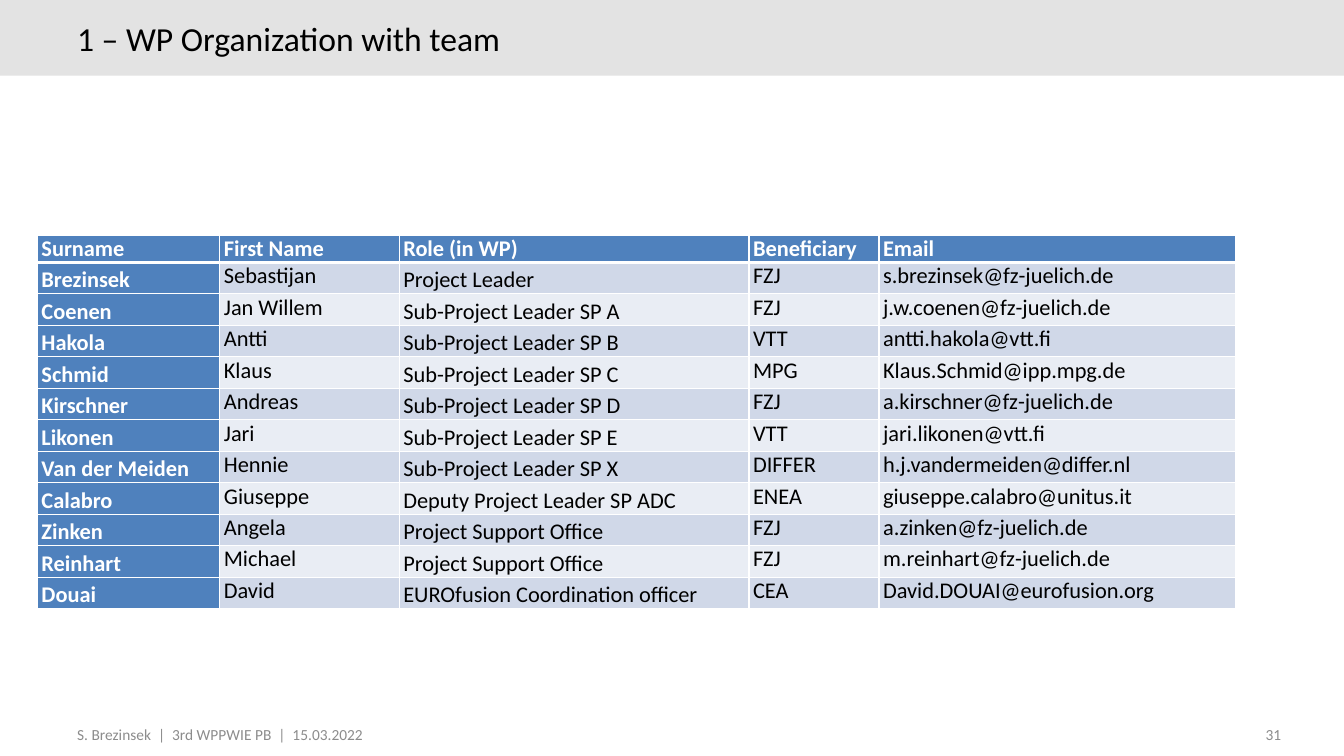
"""Build the team slide on a grid of 160 columns by 90 rows."""
from dataclasses import dataclass

from lxml.etree import SubElement
from pptx import Presentation
from pptx.dml.color import RGBColor
from pptx.enum.shapes import MSO_SHAPE
from pptx.enum.text import MSO_ANCHOR, PP_ALIGN
from pptx.oxml.ns import qn
from pptx.slide import Slide
from pptx.table import _Cell
from pptx.text.text import _Paragraph
from pptx.util import Inches, Length, Pt

COLS, ROWS = 160, 90
WIDE, HIGH = Inches(13.33), Inches(7.5)
FONT = "Calibri"
HUES = {
    "bar": "E3E3E3", "ink": "000000", "grey": "8C8C8C", "white": "FFFFFF",
    "blue": "4F81BD", "odd": "D0D8E8", "even": "E9EDF4",
}
WIDTHS = (21.72, 21.36, 41.64, 15.48, 42.48)
HEAD, BODY = 3.24, 3.75
ROLE = 2
TEAM = (
    ("Surname", "First Name", "Role (in WP)", "Beneficiary", "Email"),
    ("Brezinsek", "Sebastijan", "Project Leader", "FZJ", "s.brezinsek@fz-juelich.de"),
    ("Coenen", "Jan Willem", "Sub-Project Leader SP A", "FZJ", "j.w.coenen@fz-juelich.de"),
    ("Hakola", "Antti", "Sub-Project Leader SP B", "VTT", "antti.hakola@vtt.fi"),
    ("Schmid", "Klaus", "Sub-Project Leader SP C", "MPG", "Klaus.Schmid@ipp.mpg.de"),
    ("Kirschner", "Andreas", "Sub-Project Leader SP D", "FZJ", "a.kirschner@fz-juelich.de"),
    ("Likonen", "Jari", "Sub-Project Leader SP E", "VTT", "jari.likonen@vtt.fi"),
    ("Van der Meiden", "Hennie", "Sub-Project Leader SP X", "DIFFER", "h.j.vandermeiden@differ.nl"),
    ("Calabro", "Giuseppe", "Deputy Project Leader SP ADC", "ENEA", "giuseppe.calabro@unitus.it"),
    ("Zinken", "Angela", "Project Support Office", "FZJ", "a.zinken@fz-juelich.de"),
    ("Reinhart", "Michael", "Project Support Office", "FZJ", "m.reinhart@fz-juelich.de"),
    ("Douai", "David", "EUROfusion Coordination officer", "CEA", "David.DOUAI@eurofusion.org"),
)


@dataclass(frozen=True)
class Label:
    text: str
    left: float
    top: float
    width: float
    height: float
    size: int
    hue: str
    align: PP_ALIGN = PP_ALIGN.LEFT
    anchor: MSO_ANCHOR = MSO_ANCHOR.TOP


LABELS = (
    Label("1 – WP Organization with team", 8, 1.5, 132, 6, 24, "ink", anchor=MSO_ANCHOR.MIDDLE),
    Label("31", 144.24, 85.68, 9.48, 2.64, 11, "grey", PP_ALIGN.RIGHT),
    Label("S. Brezinsek  |  3rd WPPWIE PB  |  15.03.2022", 8, 85.68, 45.6, 4.32, 11, "grey"),
)


def across(cols: float) -> Length:
    return Length(round(WIDE * cols / COLS))


def down(rows: float) -> Length:
    return Length(round(HIGH * rows / ROWS))


def color(hue: str) -> RGBColor:
    return RGBColor.from_string(HUES[hue])


def style(para: _Paragraph, size: int, hue: str, bold: bool = False) -> None:
    for run in para.runs:
        run.font.name = FONT
        run.font.size = Pt(size)
        run.font.bold = bold
        run.font.color.rgb = color(hue)


def add_bar(slide: Slide) -> None:
    bar = slide.shapes.add_shape(MSO_SHAPE.RECTANGLE, 0, 0, WIDE, down(9))
    bar.shadow.inherit = False
    bar.fill.solid()
    bar.fill.fore_color.rgb = color("bar")
    bar.line.fill.background()


def add_label(slide: Slide, label: Label) -> None:
    box = slide.shapes.add_textbox(
        across(label.left), down(label.top), across(label.width), down(label.height))
    frame = box.text_frame
    frame.word_wrap = True
    frame.vertical_anchor = label.anchor
    frame.text = label.text
    para = frame.paragraphs[0]
    para.alignment = label.align
    style(para, label.size, label.hue)


def add_edge(cell: _Cell, side: str, points: int) -> None:
    line = SubElement(cell._tc.get_or_add_tcPr(), qn(f"a:ln{side}"), w=str(Pt(points)))
    fill = SubElement(line, qn("a:solidFill"))
    SubElement(fill, qn("a:srgbClr"), val=HUES["white"])


def fill_cell(cell: _Cell, text: str, row: int, col: int) -> None:
    strong = row == 0 or col == 0
    thick = {(0, "B"), (1, "T")}
    for side in "LRTB":
        add_edge(cell, side, 3 if (row, side) in thick else 1)
    cell.fill.solid()
    cell.fill.fore_color.rgb = color("blue" if strong else "odd" if row % 2 else "even")
    cell.margin_left = cell.margin_right = across(0.5)
    cell.margin_top = cell.margin_bottom = 0
    low = row > 0 and col in (0, ROLE)
    cell.vertical_anchor = MSO_ANCHOR.BOTTOM if low else MSO_ANCHOR.TOP
    cell.text_frame.text = text
    para = cell.text_frame.paragraphs[0]
    para.alignment = PP_ALIGN.JUSTIFY
    para.space_after = Pt(6)
    if row > 0 and col == ROLE:
        para.line_spacing = 1.15
    style(para, 16, "white" if strong else "ink", strong)


def add_team(slide: Slide) -> None:
    high = HEAD + BODY * (len(TEAM) - 1)
    table = slide.shapes.add_table(
        len(TEAM), len(WIDTHS), across(4.44), down(28), across(sum(WIDTHS)), down(high)).table
    for col, width in zip(table.columns, WIDTHS):
        col.width = across(width)
    for row, names in enumerate(TEAM):
        table.rows[row].height = down(BODY if row else HEAD)
        for col, text in enumerate(names):
            fill_cell(table.cell(row, col), text, row, col)


def main() -> None:
    deck = Presentation()
    deck.slide_width, deck.slide_height = WIDE, HIGH
    slide = deck.slides.add_slide(deck.slide_layouts[6])
    add_bar(slide)
    for label in LABELS:
        add_label(slide, label)
    add_team(slide)
    deck.save("out.pptx")


if __name__ == "__main__":
    main()
